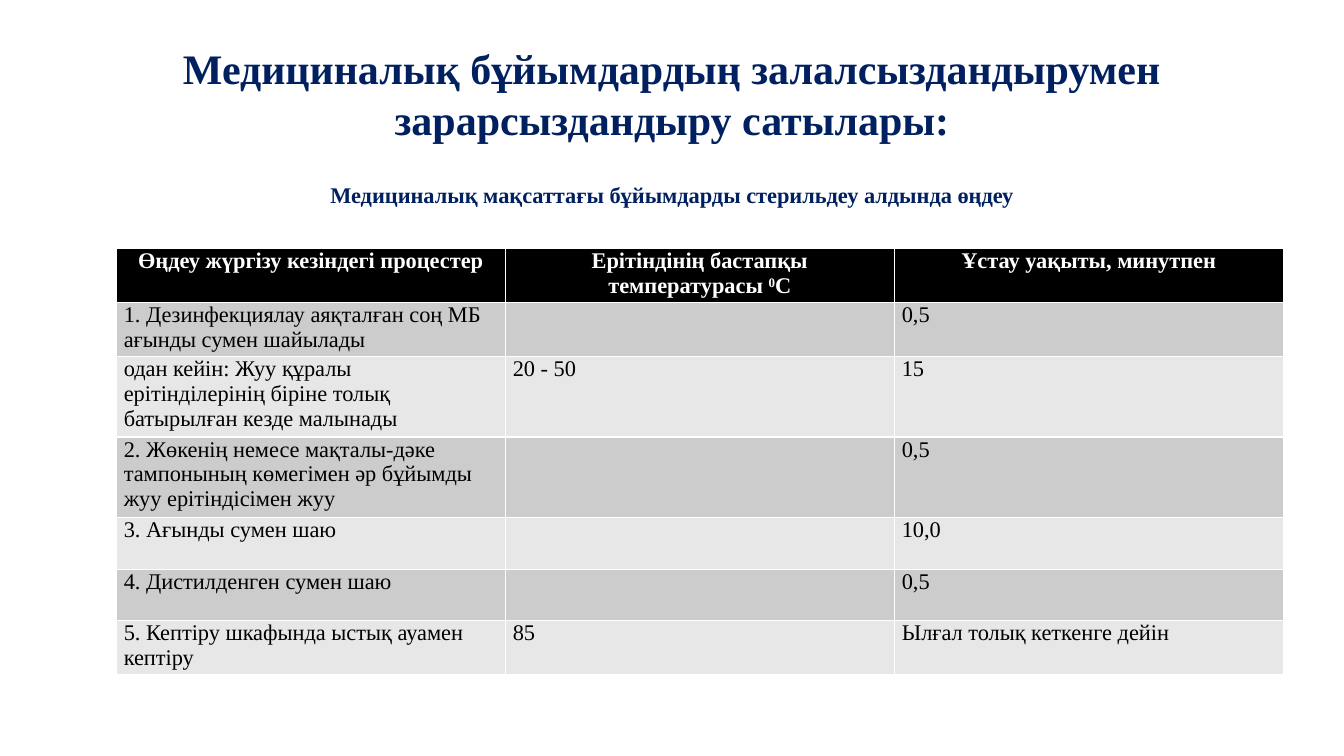
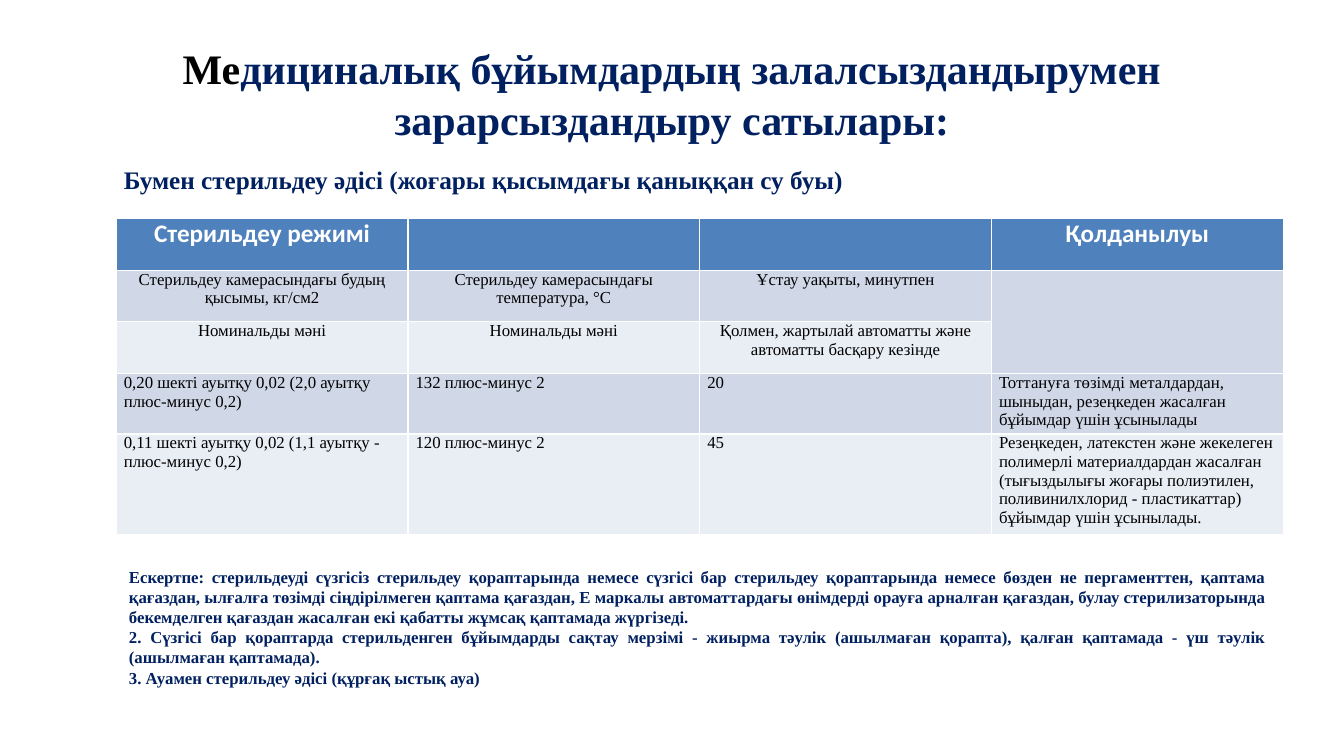
"""Build two slides on the stages of sterilizing medical devices."""
from pptx import Presentation
from pptx.dml.color import RGBColor
from pptx.enum.text import MSO_ANCHOR, PP_ALIGN
from pptx.util import Cm, Pt

LEFT, CENTER, JUSTIFY = PP_ALIGN.LEFT, PP_ALIGN.CENTER, PP_ALIGN.JUSTIFY
TOP, MIDDLE = MSO_ANCHOR.TOP, MSO_ANCHOR.MIDDLE

NAVY = RGBColor(0x00, 0x20, 0x60)
BLACK = RGBColor(0x00, 0x00, 0x00)
WHITE = RGBColor(0xFF, 0xFF, 0xFF)
BLUE = RGBColor(0x4F, 0x81, 0xBD)
GREY_BANDS = (RGBColor(0xCC, 0xCC, 0xCC), RGBColor(0xE7, 0xE7, 0xE7))
BLUE_BANDS = (RGBColor(0xD0, 0xD8, 0xE8), RGBColor(0xE9, 0xED, 0xF4))

SERIF = "Times New Roman"
SANS = "Calibri"

CONTENT_LEFT, CONTENT_WIDTH = Cm(1.7), Cm(30.48)
TABLE_LEFT, TABLE_WIDTH = Cm(2.93), Cm(29.41)
ROW_HEIGHT = Cm(1.3)
CELL_MARGIN = Cm(0.19)

TITLE = "Медициналық бұйымдардың залалсыздандырумен зарарсыздандыру сатылары:"

PROCESSING_ROWS = [
    ("Өңдеу жүргізу кезіндегі процестер", "Ерітіндінің бастапқы температурасы ",
     "Ұстау уақыты, минутпен"),
    ("1. Дезинфекциялау аяқталған соң МБ ағынды сумен шайылады", "", "0,5"),
    ("одан кейін: Жуу құралы ерітінділерінің біріне толық батырылған кезде малынады",
     "20 - 50", "15"),
    ("2. Жөкенің немесе мақталы-дәке тампонының көмегімен әр бұйымды жуу "
     "ерітіндісімен жуу", "", "0,5"),
    ("3. Ағынды сумен шаю", "", "10,0"),
    ("4. Дистилденген сумен шаю", "", "0,5"),
    ("5. Кептіру шкафында ыстық ауамен кептіру", "85", "Ылғал толық кеткенге дейін"),
]

STEAM_ROWS = [
    ("Стерильдеу режимі", "", "", "Қолданылуы"),
    ("Стерильдеу камерасындағы будың қысымы, кг/см2",
     "Стерильдеу камерасындағы температура, °С", "Ұстау уақыты, минутпен", ""),
    ("Номинальды мәні", "Номинальды мәні",
     "Қолмен, жартылай автоматты және автоматты басқару кезінде", ""),
    ("0,20 шекті ауытқу 0,02 (2,0 ауытқу плюс-минус 0,2)", "132 плюс-минус 2", "20",
     "Тоттануға төзімді металдардан, шыныдан, резеңкеден жасалған бұйымдар үшін "
     "ұсынылады"),
    ("0,11 шекті ауытқу 0,02 (1,1 ауытқу - плюс-минус 0,2)", "120 плюс-минус 2", "45",
     "Резеңкеден, латекстен және жекелеген полимерлі материалдардан жасалған "
     "(тығыздылығы жоғары полиэтилен, поливинилхлорид - пластикаттар) бұйымдар үшін "
     "ұсынылады."),
]

NOTES = [
    "Ескертпе: стерильдеуді сүзгісіз стерильдеу қораптарында немесе сүзгісі бар "
    "стерильдеу қораптарында немесе бөзден не пергаменттен, қаптама қағаздан, ылғалға "
    "төзімді сіңдірілмеген қаптама қағаздан, Е маркалы автоматтардағы өнімдерді орауға "
    "арналған қағаздан, булау стерилизаторында бекемделген қағаздан жасалған екі қабатты "
    "жұмсақ қаптамада жүргізеді.",
    "2. Сүзгісі бар қораптарда стерильденген бұйымдарды сақтау мерзімі - жиырма тәулік "
    "(ашылмаған қорапта), қалған қаптамада - үш тәулік (ашылмаған қаптамада).",
    "3. Ауамен стерильдеу әдісі (құрғақ ыстық ауа)",
]


def style_paragraph(paragraph, size, color, bold=True, alignment=LEFT, font_name=SERIF):
    """Set the font and alignment of a paragraph."""
    paragraph.alignment = alignment
    font = paragraph.font
    font.name, font.size, font.bold = font_name, Pt(size), bold
    font.color.rgb = color


def add_text(slide, left, top, width, height, lines, size, alignment=LEFT, anchor=TOP):
    """Add a wrapped text box in bold navy and return its text frame."""
    frame = slide.shapes.add_textbox(left, top, width, height).text_frame
    frame.word_wrap = True
    frame.vertical_anchor = anchor
    frame.text = "\n".join(lines)
    for paragraph in frame.paragraphs:
        style_paragraph(paragraph, size, NAVY, alignment=alignment)
    return frame


def add_title(slide, black_letters=0):
    """Add the shared title, with its first letters in black if asked."""
    frame = add_text(slide, CONTENT_LEFT, Cm(0.76), CONTENT_WIDTH, Cm(3.18),
                     [TITLE], 30, CENTER, MIDDLE)
    if black_letters:
        paragraph = frame.paragraphs[0]
        first_run = paragraph.runs[0]
        first_run.text = TITLE[:black_letters]
        first_run.font.color.rgb = BLACK
        paragraph.add_run().text = TITLE[black_letters:]


def add_banded_table(slide, top, rows, header_fill, bands, header_size, body_size,
                     header_font=SERIF, centered_rows=1):
    """Add a table with a header row and alternating row fills."""
    column_count = len(rows[0])
    table = slide.shapes.add_table(len(rows), column_count, TABLE_LEFT, top,
                                   TABLE_WIDTH, ROW_HEIGHT * len(rows)).table
    for row_index, row in enumerate(rows):
        is_header = row_index == 0
        fill_color = header_fill if is_header else bands[(row_index - 1) % 2]
        alignment = CENTER if row_index < centered_rows else LEFT
        for column_index, text in enumerate(row):
            cell = table.cell(row_index, column_index)
            cell.margin_left = cell.margin_right = CELL_MARGIN
            cell.margin_top = cell.margin_bottom = 0
            cell.fill.solid()
            cell.fill.fore_color.rgb = fill_color
            cell.text = text
            style_paragraph(cell.text_frame.paragraphs[0],
                            header_size if is_header else body_size,
                            WHITE if is_header else BLACK, is_header, alignment,
                            header_font if is_header else SERIF)
    return table


def add_degrees(paragraph):
    """Append a degree Celsius unit with a raised zero."""
    zero = paragraph.add_run()
    zero.text = "0"
    zero.font._element.set("baseline", "30000")
    paragraph.add_run().text = "С"


def build_processing_slide(slide):
    """Fill the slide on processing before sterilization."""
    add_title(slide)
    add_text(slide, CONTENT_LEFT, Cm(4.45), CONTENT_WIDTH, Cm(1),
             ["Медициналық мақсаттағы бұйымдарды стерильдеу алдында өңдеу"], 16, CENTER)
    table = add_banded_table(slide, Cm(6.27), PROCESSING_ROWS, BLACK, GREY_BANDS, 16, 16)
    add_degrees(table.cell(0, 1).text_frame.paragraphs[0])


def build_steam_slide(slide):
    """Fill the slide on steam sterilization."""
    add_title(slide, black_letters=2)
    add_text(slide, Cm(2.87), Cm(4.01), Cm(24.49), Cm(1.02),
             ["Бумен стерильдеу әдісі (жоғары қысымдағы қаныққан су буы)"], 18)
    table = add_banded_table(slide, Cm(5.51), STEAM_ROWS, BLUE, BLUE_BANDS, 18, 12,
                             header_font=SANS, centered_rows=3)
    table.cell(1, 3).merge(table.cell(2, 3))
    add_text(slide, Cm(3), Cm(14.15), Cm(29.18), Cm(3.33), NOTES, 12, JUSTIFY)


def main():
    """Build and save the presentation."""
    presentation = Presentation()
    presentation.slide_width, presentation.slide_height = Cm(33.87), Cm(19.05)
    blank_layout = presentation.slide_layouts[6]
    for build in (build_processing_slide, build_steam_slide):
        build(presentation.slides.add_slide(blank_layout))
    presentation.save("out.pptx")


if __name__ == "__main__":
    main()
